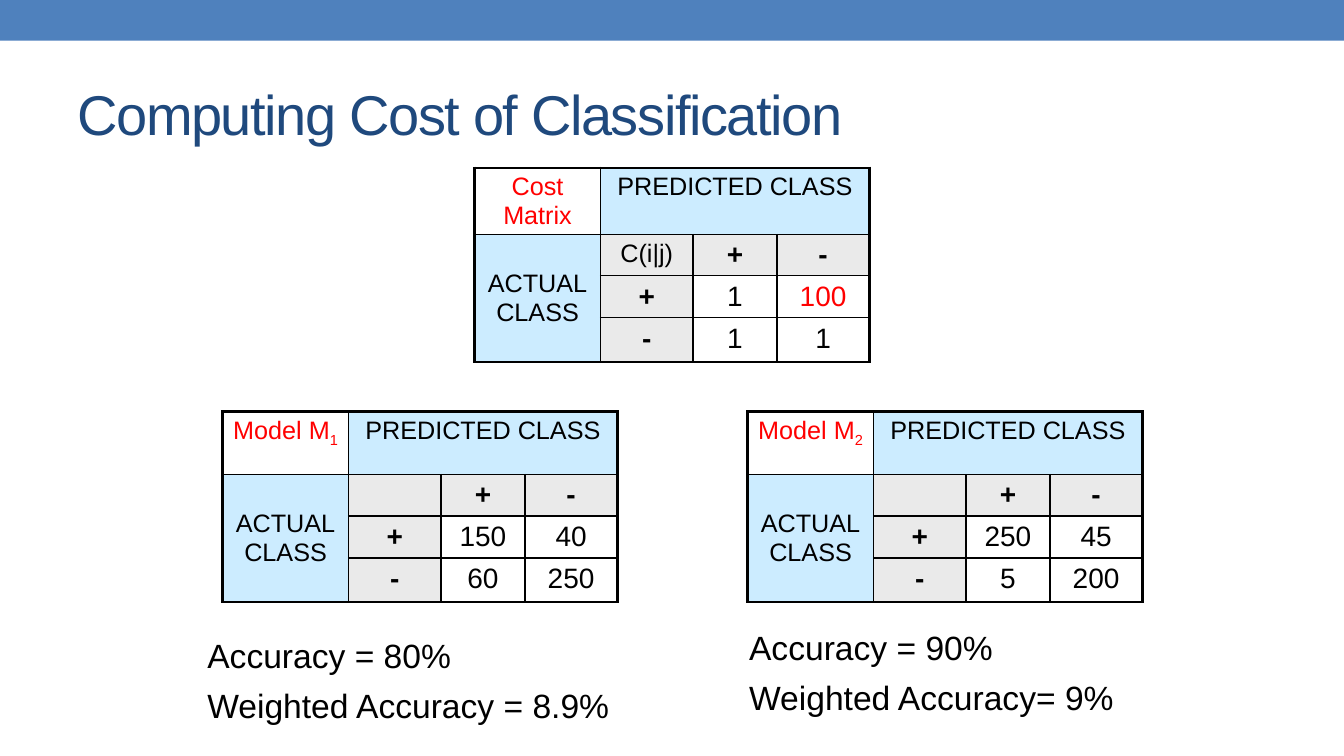
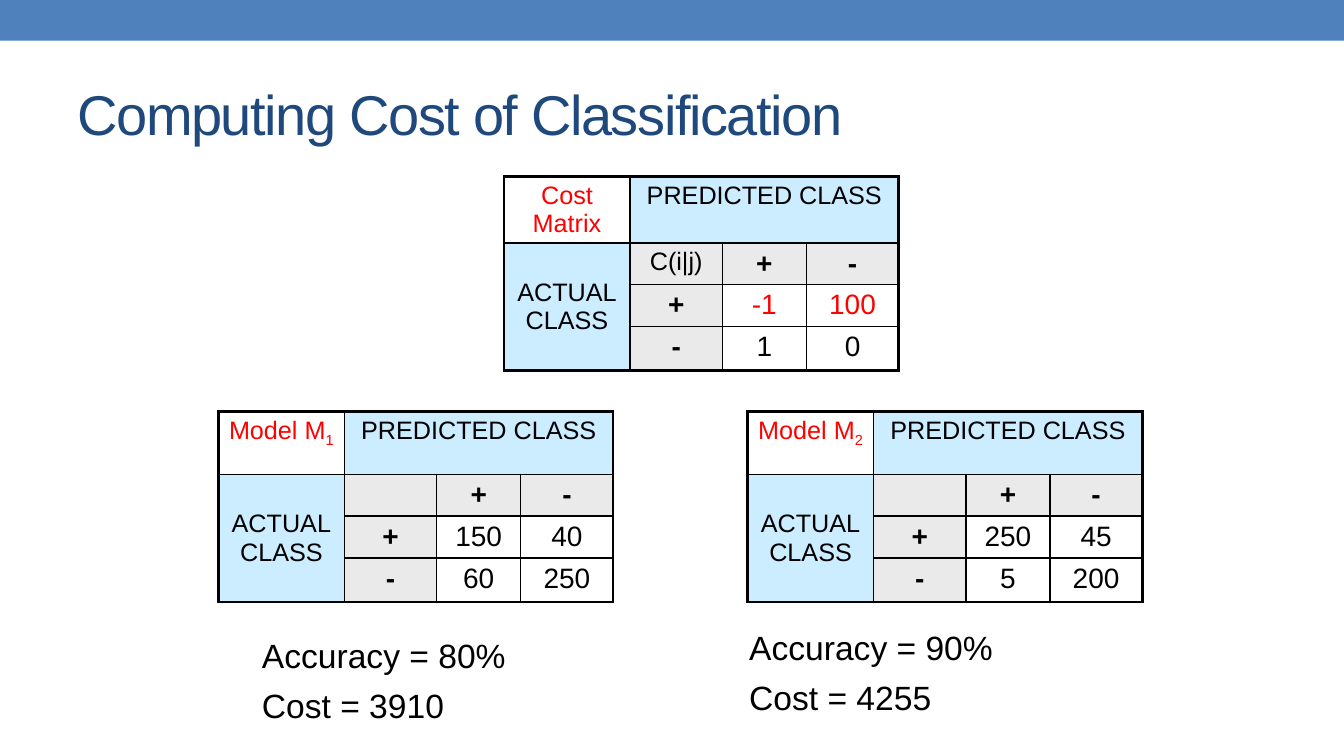
from pptx import Presentation
from pptx.dml.color import RGBColor
from pptx.enum.shapes import MSO_SHAPE
from pptx.enum.text import MSO_ANCHOR, PP_ALIGN
from pptx.oxml.ns import qn
from pptx.util import Pt
from lxml.etree import SubElement

WIDE, HIGH = 960, 540
FONT = "Arial"
BLUE, NAVY, RED, BLACK, WHITE = "4F81BD", "1F497D", "FF0000", "000000", "FFFFFF"
SKY, GREY = "CCECFF", "EAEAEA"
COLS = [90, 66, 60, 66]
ROWS = [45, 27.5, 30, 31.5]
THIN, THICK = 1, 2.25


def color(code):
    return RGBColor.from_string(code)


def style(para, size, code=BLACK, bold=False):
    for run in para.runs:
        font = run.font
        font.name, font.size, font.bold = FONT, Pt(size), bold
        font.color.rgb = color(code)


# Blue band, placed once on the master
def add_band(deck, slide):
    band = slide.shapes.add_shape(MSO_SHAPE.RECTANGLE, 0, 0, Pt(WIDE), Pt(29))
    band.shadow.inherit = False
    band.fill.solid()
    band.fill.fore_color.rgb = color(BLUE)
    band.line.fill.background()
    deck.slide_master.shapes.element.insert(2, band.element)


def add_title(slide, text):
    title = slide.shapes.title
    title.left, title.top, title.width, title.height = Pt(48), Pt(42), Pt(864), Pt(78)
    frame = title.text_frame
    frame.text = text
    frame.vertical_anchor = MSO_ANCHOR.MIDDLE
    para = frame.paragraphs[0]
    para.alignment = PP_ALIGN.LEFT
    style(para, 40, NAVY)
    for run in para.runs:
        run._r.get_or_add_rPr().set("spc", "-100")


# Cell borders: thick on the rim of the table, thin inside
def add_edges(cell, row, col):
    high = cell.span_height if cell.is_merge_origin else 1
    wide = cell.span_width if cell.is_merge_origin else 1
    rims = {"L": col == 0, "R": col + wide == len(COLS),
            "T": row == 0, "B": row + high == len(ROWS)}
    props = cell._tc.get_or_add_tcPr()
    for side, rim in rims.items():
        line = SubElement(props, qn("a:ln" + side), w=str(Pt(THICK if rim else THIN)))
        fill = SubElement(line, qn("a:solidFill"))
        SubElement(fill, qn("a:srgbClr"), val=BLACK)


def fill_cell(cell, row, col, text, hot):
    inner = row > 0 and col > 0
    head = inner and (row == 1 or col == 1)
    corner = row == col == 0
    if inner:
        back = GREY if head else WHITE
    else:
        back = WHITE if corner else SKY
    cell.fill.solid()
    cell.fill.fore_color.rgb = color(back)
    if (row, col) == (1, 0):
        cell.vertical_anchor = MSO_ANCHOR.MIDDLE
    para = cell.text_frame.paragraphs[0]
    para.alignment = PP_ALIGN.CENTER
    para.text = text
    big = inner and (row, col) != (1, 1)
    red = corner or (row, col) in hot
    style(para, 20 if big else 18, RED if red else BLACK, head and big)


# Confusion or cost matrix with its top left corner at (left, top)
def add_matrix(slide, left, top, name, values, sub="", key="", hot=()):
    (a, b), (c, d) = values
    texts = [[name, "PREDICTED CLASS", "", ""],
             ["ACTUAL\vCLASS", key, "+", "-"],
             ["", "+", a, b],
             ["", "-", c, d]]
    table = slide.shapes.add_table(len(ROWS), len(COLS), Pt(left), Pt(top),
                                   Pt(sum(COLS)), Pt(sum(ROWS))).table
    for col, width in zip(table.columns, COLS):
        col.width = Pt(width)
    for row, height in zip(table.rows, ROWS):
        row.height = Pt(height)
    table.cell(0, 1).merge(table.cell(0, 3))
    table.cell(1, 0).merge(table.cell(3, 0))
    for i, line in enumerate(texts):
        for j, text in enumerate(line):
            cell = table.cell(i, j)
            add_edges(cell, i, j)
            fill_cell(cell, i, j, str(text), hot)
    if sub:
        para = table.cell(0, 0).text_frame.paragraphs[0]
        run = para.add_run()
        run.text = sub
        style(para, 18, RED)
        run._r.get_or_add_rPr().set("baseline", "-25000")


# Lines of results below a model
def add_notes(slide, left, top, width, lines):
    box = slide.shapes.add_textbox(Pt(left), Pt(top), Pt(width), Pt(78))
    frame = box.text_frame
    frame.word_wrap = True
    frame.text = "\n".join(lines)
    for para in frame.paragraphs:
        para.space_before, para.space_after = Pt(3), Pt(4)
        style(para, 24)


def add_page(deck, cost, hot, spot, left, notes):
    slide = deck.slides.add_slide(deck.slide_layouts[5])
    add_title(slide, "Computing Cost of Classification")
    add_matrix(slide, *spot, "Cost Matrix", cost, key="C(i|j)", hot=hot)
    add_matrix(slide, left, 294, "Model M", [(150, 40), (60, 250)], sub="1")
    add_matrix(slide, 534, 294, "Model M", [(250, 45), (5, 200)], sub="2")
    for note in notes:
        add_notes(slide, *note)
    return slide


def main():
    deck = Presentation()
    deck.slide_width, deck.slide_height = Pt(WIDE), Pt(HIGH)
    first = add_page(
        deck, [(1, 100), (1, 1)], [(2, 3)], (339, 120), 159,
        [(141, 450, 306, ["Accuracy = 80%", "Weighted Accuracy = 8.9%"]),
         (528, 444, 294, ["Accuracy = 90%", "Weighted Accuracy= 9%"])])
    add_band(deck, first)
    add_page(
        deck, [(-1, 100), (1, 0)], [(2, 2), (2, 3)], (360, 126), 156,
        [(180, 450, 240, ["Accuracy = 80%", "Cost = 3910"]),
         (528, 444, 240, ["Accuracy = 90%", "Cost = 4255"])])
    deck.save("out.pptx")


if __name__ == "__main__":
    main()
